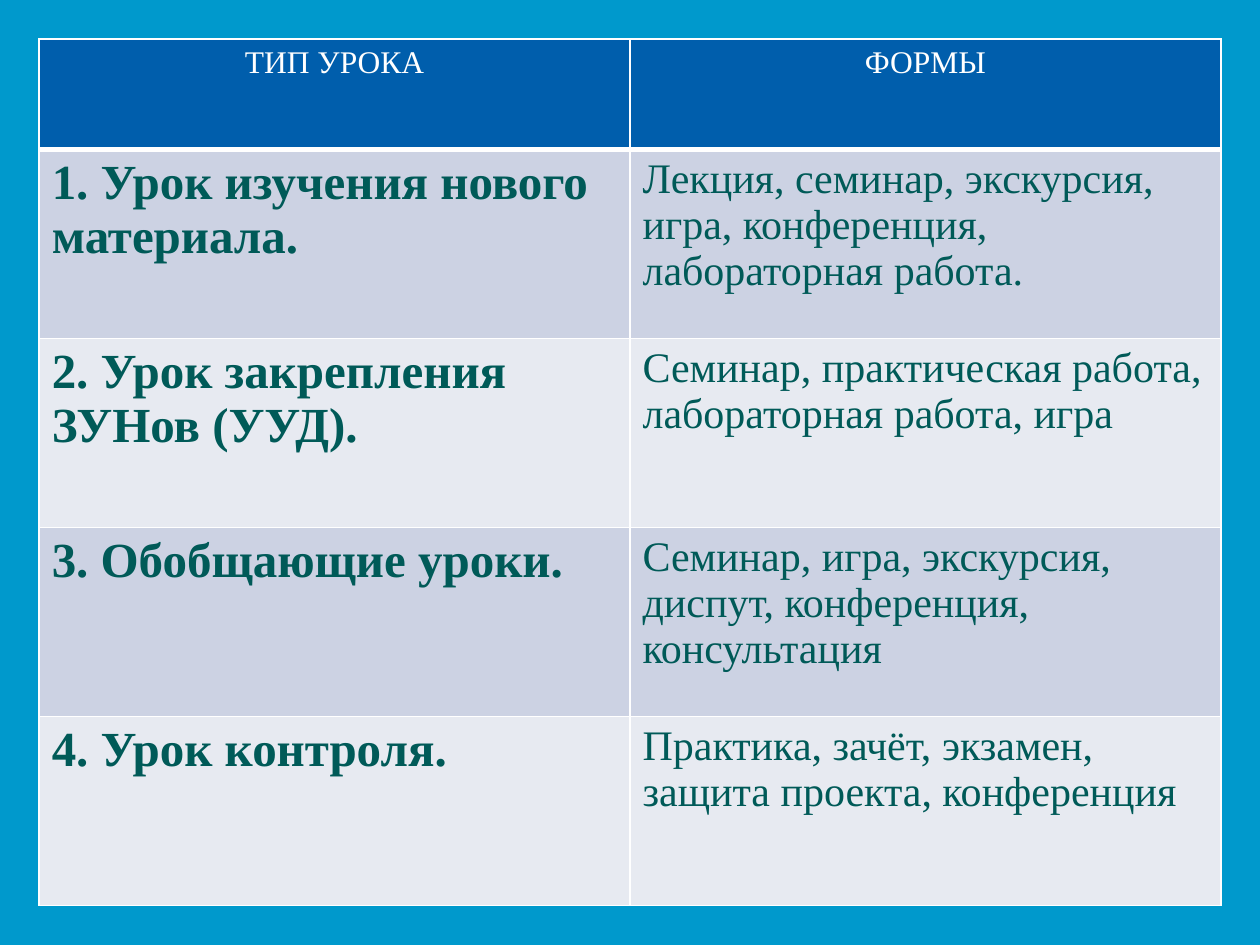
from lxml import etree
from pptx import Presentation
from pptx import util as u
from pptx.dml.color import RGBColor
from pptx.enum import text
from pptx.oxml import ns

COLORS = {"back": "0099CC", "header": "005EAC", "odd": "CCD2E3",
          "even": "E7EAF1", "ink": "005A58", "white": "FFFFFF"}
ROWS = [
    ("ТИП УРОКА", "ФОРМЫ"),
    ("1. Урок изучения нового материала.",
     "Лекция, семинар, экскурсия, игра, конференция, лабораторная работа."),
    ("2. Урок закрепления ЗУНов (УУД).",
     "Семинар, практическая работа, лабораторная работа, игра"),
    ("3. Обобщающие уроки.",
     "Семинар, игра, экскурсия, диспут, конференция, консультация"),
    ("4. Урок контроля.",
     "Практика, зачёт, экзамен, защита проекта, конференция"),
]


def rgb(name):
    return RGBColor.from_string(COLORS[name])


def add_borders(cell, widths):
    tcPr = cell._tc.get_or_add_tcPr()
    for i, (side, width) in enumerate(widths.items()):
        ln = etree.Element(ns.qn(f"a:ln{side}"), w=str(u.Pt(width)))
        fill = etree.SubElement(ln, ns.qn("a:solidFill"))
        etree.SubElement(fill, ns.qn("a:srgbClr"), val=COLORS["white"])
        tcPr.insert(i, ln)


prs = Presentation()
prs.slide_width, prs.slide_height = u.Cm(25.4), u.Cm(19.05)
s = prs.slides.add_slide(prs.slide_layouts[6])
s.background.fill.solid()
s.background.fill.fore_color.rgb = rgb("back")

header_height, row_height = 2.22, 3.81
tbl = s.shapes.add_table(len(ROWS), 2, u.Cm(0.79), u.Cm(0.79), u.Cm(23.82),
                         u.Cm(header_height + 4 * row_height)).table
for col in tbl.columns:
    col.width = u.Cm(11.91)

for i, row in enumerate(ROWS):
    header = i == 0
    tbl.rows[i].height = u.Cm(header_height if header else row_height)
    for j, words in enumerate(row):
        cell = tbl.cell(i, j)
        cell.fill.solid()
        cell.fill.fore_color.rgb = rgb("header" if header else "odd" if i % 2 else "even")
        add_borders(cell, {"L": 1, "R": 1, "T": 3 if i == 1 else 1, "B": 3 if header else 1})
        p = cell.text_frame.paragraphs[0]
        p.alignment = text.PP_ALIGN.CENTER if header else text.PP_ALIGN.LEFT
        r = p.add_run()
        r.text = words
        r.font.name = "Times New Roman"
        r.font.size = u.Pt(18 if header else (28, 24)[j])
        r.font.bold = not header and j == 0
        r.font.color.rgb = rgb("white" if header else "ink")

prs.save("out.pptx")
